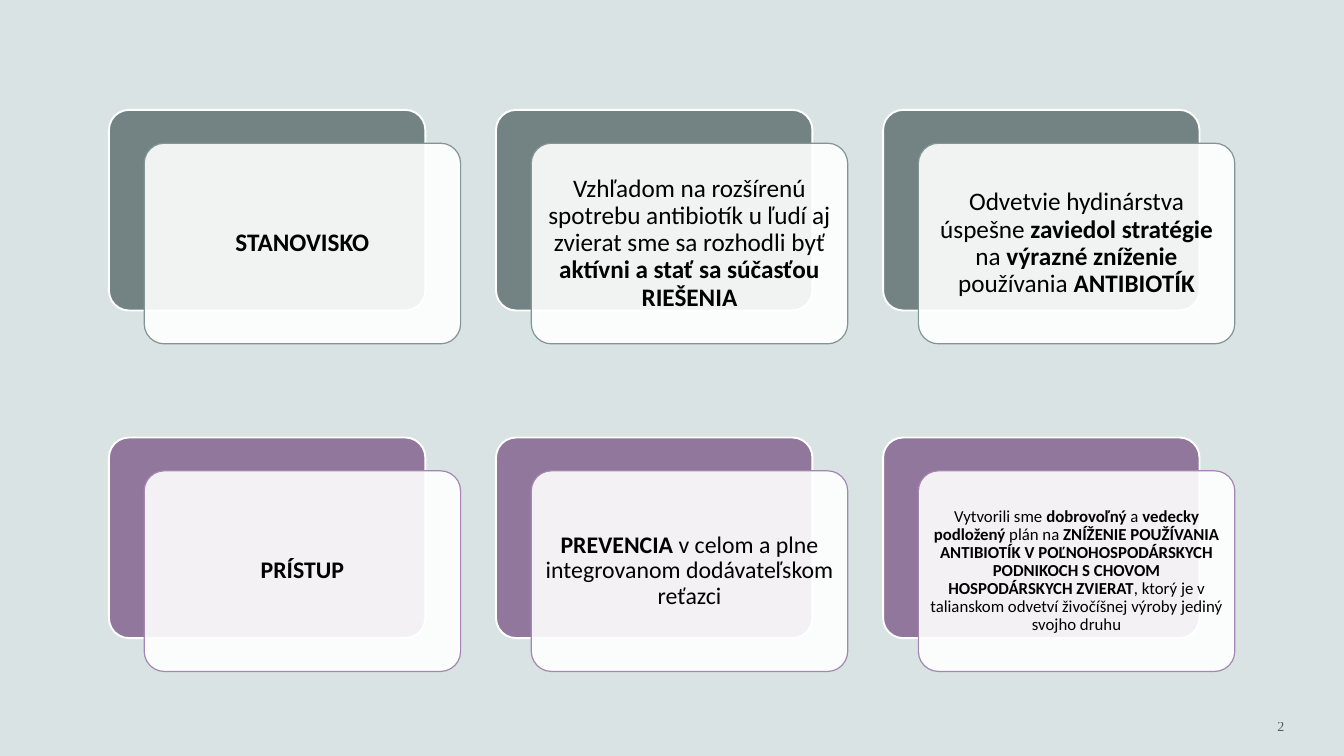
import pptx
import pptx.util
import pptx.dml.color
import pptx.enum.shapes
import pptx.enum.text
import pptx.oxml
import pptx.oxml.ns

Pt = pptx.util.Pt
ALIGN = pptx.enum.text.PP_ALIGN
MIDDLE = pptx.enum.text.MSO_ANCHOR.MIDDLE

CARD_W, CARD_H = 226, 143.3
FIRST_LEFT, FIRST_TOP = 77.8, 78.5
COLUMN_STEP, ROW_STEP = 276.5, 234
PANEL_DX, PANEL_DY = 25.2, 23.8

# Each row: back colour, panel outline, then (text, size, inset) per card.
# Double asterisks switch bold on and off.
ROWS = [
    ("738383", "829494", [
        ("**STANOVISKO**", 18, 5),
        ("Vzhľadom na rozšírenú spotrebu antibiotík u ľudí aj zvierat sme sa "
         "rozhodli byť **aktívni a stať sa súčasťou RIEŠENIA**", 18, 5),
        ("Odvetvie hydinárstva úspešne **zaviedol stratégie **na **výrazné "
         "zníženie **používania **ANTIBIOTÍK**", 18, 5),
    ]),
    ("90779B", "A387B0", [
        ("**PRÍSTUP**", 17, 5),
        ("**PREVENCIA** v celom a plne integrovanom dodávateľskom reťazci", 17, 5),
        ("Vytvorili sme **dobrovoľný** a **vedecky podložený** plán na "
         "**ZNÍŽENIE POUŽÍVANIA ANTIBIOTÍK V POĽNOHOSPODÁRSKYCH PODNIKOCH "
         "S CHOVOM HOSPODÁRSKYCH ZVIERAT**, ktorý je v talianskom odvetví "
         "živočíšnej výroby jediný svojho druhu", 12, 3.6),
    ]),
]


def paint(fill, colour):
    fill.solid()
    fill.fore_color.rgb = pptx.dml.color.RGBColor.from_string(colour)


def set_opacity(element, percent):
    """Apply opacity to the first colour inside an XML element."""
    colour = element.find(".//" + pptx.oxml.ns.qn("a:srgbClr"))
    alpha = pptx.oxml.parse_xml(
        f'<a:alpha {pptx.oxml.ns.nsdecls("a")} val="{percent * 1000}"/>')
    colour.append(alpha)


def write(holder, text, size, font="Calibri", colour="000000", align=ALIGN.CENTER,
          inset=5, line_spacing=0.9, opacity=100, tracking=0):
    """Fill a shape with one paragraph; ** toggles bold."""
    frame = holder.text_frame
    frame.word_wrap = True
    frame.vertical_anchor = MIDDLE
    frame.margin_left = frame.margin_right = Pt(inset)
    frame.margin_top = frame.margin_bottom = Pt(inset)
    paragraph = frame.paragraphs[0]
    paragraph.alignment = align
    paragraph.line_spacing = line_spacing
    for index, part in enumerate(text.split("**")):
        if not part:
            continue
        run = paragraph.add_run()
        run.text = part
        run.font.name = font
        run.font.size = Pt(size)
        run.font.bold = index % 2 == 1
        paint(run.font.fill, colour)
        if opacity < 100:
            set_opacity(run.font.fill._xPr, opacity)
        if tracking:
            run.font._element.set("spc", str(tracking * 100))


def add_rounded(shapes, left, top, fill, outline, outline_width, opacity=100):
    rounded = shapes.add_shape(pptx.enum.shapes.MSO_SHAPE.ROUNDED_RECTANGLE,
                               Pt(left), Pt(top), Pt(CARD_W), Pt(CARD_H))
    rounded.adjustments[0] = 0.1
    rounded.shadow.inherit = False
    paint(rounded.fill, fill)
    if opacity < 100:
        set_opacity(rounded._element.spPr, opacity)
    paint(rounded.line.fill, outline)
    rounded.line.width = Pt(outline_width)
    return rounded


def add_card_row(slide, top, back_colour, panel_outline, cards):
    row = slide.shapes.add_group_shape()
    for column, (text, size, inset) in enumerate(cards):
        left = FIRST_LEFT + column * COLUMN_STEP
        add_rounded(row.shapes, left, top, back_colour, "FFFFFF", 1.35)
        panel = add_rounded(row.shapes, left + PANEL_DX, top + PANEL_DY,
                            "FFFFFF", panel_outline, 0.85, opacity=90)
        write(panel, text, size, inset=inset)


def add_page_number(slide, number):
    page_number = slide.shapes.add_textbox(Pt(786.2), Pt(500.4), Pt(138.2), Pt(36))
    write(page_number, number, 10, font="Times New Roman", align=ALIGN.RIGHT,
          inset=7.2, line_spacing=1, opacity=60, tracking=2)


def main():
    deck = pptx.Presentation()
    deck.slide_width, deck.slide_height = Pt(960), Pt(540)
    slide = deck.slides.add_slide(deck.slide_layouts[6])
    paint(slide.background.fill, "DAE3E3")
    add_page_number(slide, "2")
    for index, (back_colour, panel_outline, cards) in enumerate(ROWS):
        add_card_row(slide, FIRST_TOP + index * ROW_STEP,
                     back_colour, panel_outline, cards)
    deck.save("out.pptx")


if __name__ == "__main__":
    main()
